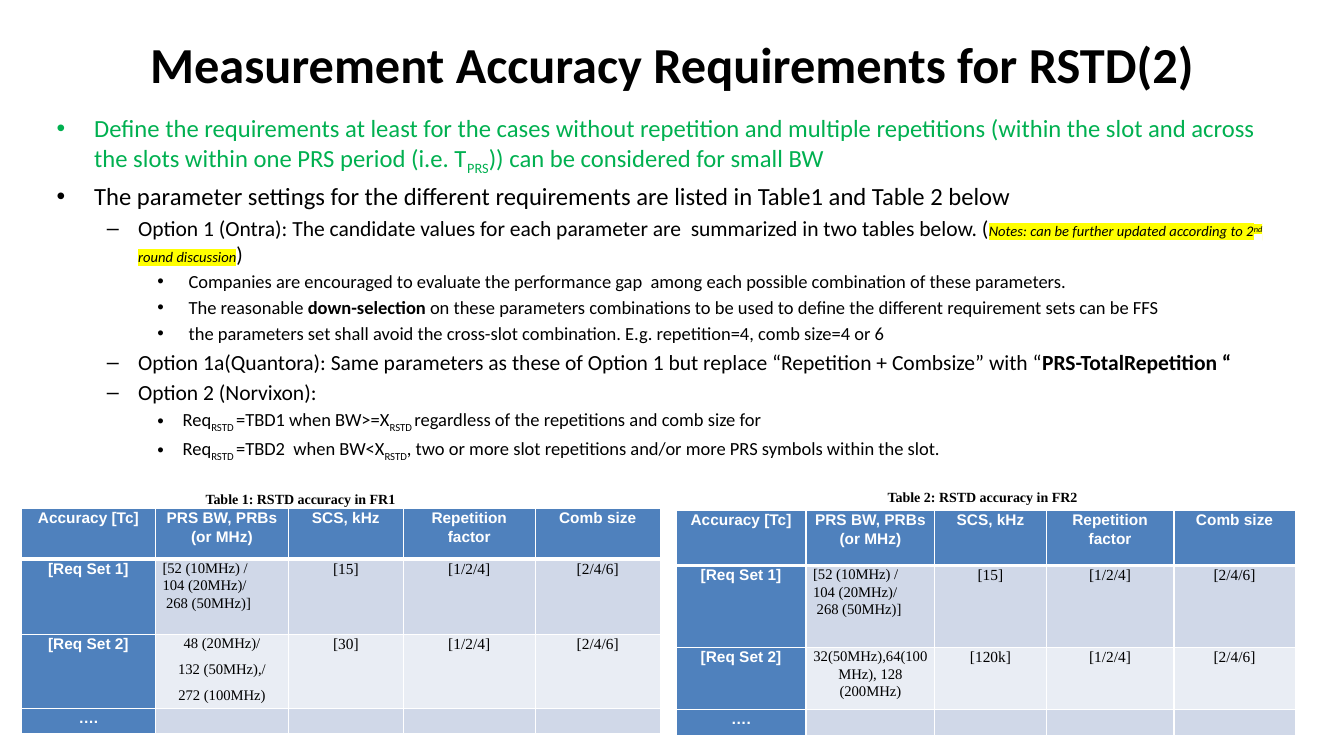
from lxml.etree import SubElement
from pptx import Presentation
from pptx.dml.color import RGBColor
from pptx.enum.text import MSO_ANCHOR, MSO_AUTO_SIZE, PP_ALIGN
from pptx.oxml.ns import qn
from pptx.util import Cm, Pt

BLACK = RGBColor(0x00, 0x00, 0x00)
WHITE = RGBColor(0xFF, 0xFF, 0xFF)
GREEN = RGBColor(0x00, 0xB0, 0x50)
YELLOW = RGBColor(0xFF, 0xFF, 0x00)
HEADER_BLUE = RGBColor(0x4F, 0x81, 0xBD)
BAND_DARK = RGBColor(0xD0, 0xD8, 0xE8)
BAND_LIGHT = RGBColor(0xE9, 0xED, 0xF4)

SUB = {"baseline": -25}
BOLD = {"bold": True}
NOTE = {"size": 10.4, "italic": True, "highlight": YELLOW}
LEVEL_SIZES = (17.6, 15.4, 13.2)
LEVEL_INDENTS = ((0.95, 0.95), (2.06, 0.79), (3.33, 0.79))
REQUIREMENT_INDENT = (3.18, 0.64)

REQUIREMENTS = [
    (0, [("Define the requirements at least for the cases without repetition and multiple "
          "repetitions (within the slot and across the slots within one PRS period (i.e. T", {}),
         ("PRS", SUB), (")) can be considered for small BW", {})]),
    (0, [("The parameter settings for the different requirements are listed in "
          "Table1 and Table 2 below", {})]),
    (1, [("Option 1 (Ontra): The candidate values for each parameter are  summarized "
          "in two tables below. (", {}),
         ("Notes: can be further updated according to 2", NOTE),
         ("nd", {**NOTE, "baseline": 30}), (" round discussion", NOTE), (")", {})]),
    (2, [("Companies are encouraged to evaluate the performance gap  among each possible "
          "combination of these parameters.", {})]),
    (2, [("The reasonable ", {}), ("down-selection", BOLD),
         (" on these parameters combinations to be used to define the different "
          "requirement sets can be FFS", {})]),
    (2, [("the parameters set shall avoid the cross-slot combination. "
          "E.g. repetition=4, comb size=4 or 6", {})]),
    (1, [("Option 1a(Quantora): Same parameters as these of Option 1 but replace "
          "“Repetition + Combsize” with “", {}), ("PRS-TotalRepetition “", BOLD)]),
    (1, [("Option 2 (Norvixon):", {})]),
    (2, [("Req", {}), ("RSTD ", SUB), ("=TBD1 when BW>=X", {}), ("RSTD ", SUB),
         ("regardless of the repetitions and comb size for", {})]),
    (2, [("Req", {}), ("RSTD ", SUB), ("=TBD2  when BW<X", {}), ("RSTD", SUB),
         (", two or more slot repetitions and/or more PRS symbols within the slot.", {})]),
]

COLUMN_SHARES = (1.33, 1.32, 1.14, 1.31, 1.24)
HEADINGS = ["Accuracy [Tc]", "PRS BW, PRBs (or MHz)", "SCS, kHz", "Repetition factor", "Comb size"]
FIRST_SET = ["[Req Set 1]", "[52 (10MHz) /\n104 (20MHz)/\n268 (50MHz)]", "[15]", "[1/2/4]", "[2/4/6]"]
MORE_SETS = ["….", "", "", "", ""]


def write(paragraph, text, font="Calibri", size=18, color=BLACK, bold=False,
          italic=False, baseline=0, highlight=None):
    run = paragraph.add_run()
    run.text = text
    run.font.size, run.font.bold, run.font.italic = Pt(size), bold, italic
    run.font.color.rgb = color
    properties = run.font._element
    if baseline:
        properties.set("baseline", str(baseline * 1000))
    if highlight is not None:
        marker = SubElement(properties, qn("a:highlight"))
        SubElement(marker, qn("a:srgbClr"), val=str(highlight))
    run.font.name = font


def set_indent(paragraph, margin, hanging=0):
    properties = paragraph._p.get_or_add_pPr()
    properties.set("marL", str(Cm(margin)))
    properties.set("indent", str(-Cm(hanging)))


def place(shape, box):
    shape.left, shape.top, shape.width, shape.height = map(Cm, box)


def build_title(slide, box):
    title = slide.shapes.title
    place(title, box)
    title.text_frame.vertical_anchor = MSO_ANCHOR.MIDDLE
    heading = title.text_frame.paragraphs[0]
    heading.alignment = PP_ALIGN.CENTER
    write(heading, "Measurement Accuracy Requirements for RSTD(2)", size=36, bold=True)


def build_requirements(slide, box):
    body = slide.placeholders[1]
    place(body, box)
    frame = body.text_frame
    frame.auto_size = MSO_AUTO_SIZE.NONE
    for index, (level, parts) in enumerate(REQUIREMENTS):
        item = frame.add_paragraph() if index else frame.paragraphs[0]
        item.level = level
        indent = REQUIREMENT_INDENT if parts[0][0] == "Req" else LEVEL_INDENTS[level]
        set_indent(item, *indent)
        size = LEVEL_SIZES[level]
        item.space_before = Pt(size * 0.2 if index else 0)
        color = BLACK if index else GREEN
        for text, formatting in parts:
            write(item, text, **{"size": size, "color": color, **formatting})


def add_borders(cell, row):
    properties = cell._tc.get_or_add_tcPr()
    for side in "LRTB":
        under_header = (row, side) in ((0, "B"), (1, "T"))
        line = SubElement(properties, qn(f"a:ln{side}"), w=str(Pt(3 if under_header else 1)))
        fill = SubElement(line, qn("a:solidFill"))
        SubElement(fill, qn("a:srgbClr"), val=str(WHITE))


def fill_cell(cell, text, row, column):
    add_borders(cell, row)
    is_heading = row == 0 or column == 0
    cell.fill.solid()
    cell.fill.fore_color.rgb = HEADER_BLUE if is_heading else BAND_DARK if row % 2 else BAND_LIGHT
    cell.margin_left = cell.margin_right = Cm(0.18)
    cell.margin_top = cell.margin_bottom = 0
    is_bandwidth = column == 1 and not is_heading
    is_left = is_bandwidth and row == 1
    for index, value in enumerate(text.split("\n")):
        entry = cell.text_frame.add_paragraph() if index else cell.text_frame.paragraphs[0]
        entry.alignment = PP_ALIGN.LEFT if is_left else PP_ALIGN.CENTER
        entry.line_spacing = 1.07
        entry.space_after = Pt(0 if is_left else 6)
        if is_left and index == 2:
            set_indent(entry, 0.09)
        if value:
            write(entry, value, font="Arial" if is_heading else "Times New Roman",
                  size=10.5 if is_bandwidth else 11,
                  color=WHITE if is_heading else BLACK, bold=is_heading)
        else:
            SubElement(entry._p, qn("a:endParaRPr"), sz="1100")


def build_accuracy_table(slide, box, caption, caption_shift, caption_rise, second_set, row_heights):
    left, top, width, height = box
    rows = [HEADINGS, FIRST_SET, second_set, MORE_SETS]
    table = slide.shapes.add_table(len(rows), len(HEADINGS), *map(Cm, box)).table
    for column, share in zip(table.columns, COLUMN_SHARES):
        column.width = Cm(width * share / sum(COLUMN_SHARES))
    for row, row_height in zip(table.rows, row_heights):
        row.height = Cm(row_height)
    for row, values in enumerate(rows):
        for column, value in enumerate(values):
            fill_cell(table.cell(row, column), value, row, column)

    label = slide.shapes.add_textbox(Cm(left + caption_shift), Cm(top - caption_rise), Cm(5.8), Cm(0.69))
    label.text_frame.word_wrap = True
    label.text_frame.vertical_anchor = MSO_ANCHOR.MIDDLE
    write(label.text_frame.paragraphs[0], caption, font="Times New Roman", size=10, bold=True)


def main():
    presentation = Presentation()
    presentation.slide_width, presentation.slide_height = Cm(33.87), Cm(19.05)
    slide = presentation.slides.add_slide(presentation.slide_layouts[1])
    build_title(slide, (1.7, 0, 30.48, 3.18))
    build_requirements(slide, (1.17, 2.72, 31.01, 9.52))
    build_accuracy_table(
        slide, (0.54, 12.82, 16.1, 5.66), "Table 1: RSTD accuracy in FR1", 4.39, 0.58,
        ["[Req Set 2]", "48 (20MHz)/\n132 (50MHz),/\n272 (100MHz)", "[30]", "[1/2/4]", "[2/4/6]"],
        (1.27, 1.9, 1.87, 0.62))
    build_accuracy_table(
        slide, (17.04, 12.87, 15.6, 5.66), "Table 2: RSTD accuracy in FR2", 5.08, 0.7,
        ["[Req Set 2]", "32(50MHz),64(100MHz), 128 (200MHz)", "[120k]", "[1/2/4]", "[2/4/6]"],
        (1.38, 2.07, 1.55, 0.66))
    presentation.save("out.pptx")


if __name__ == "__main__":
    main()
